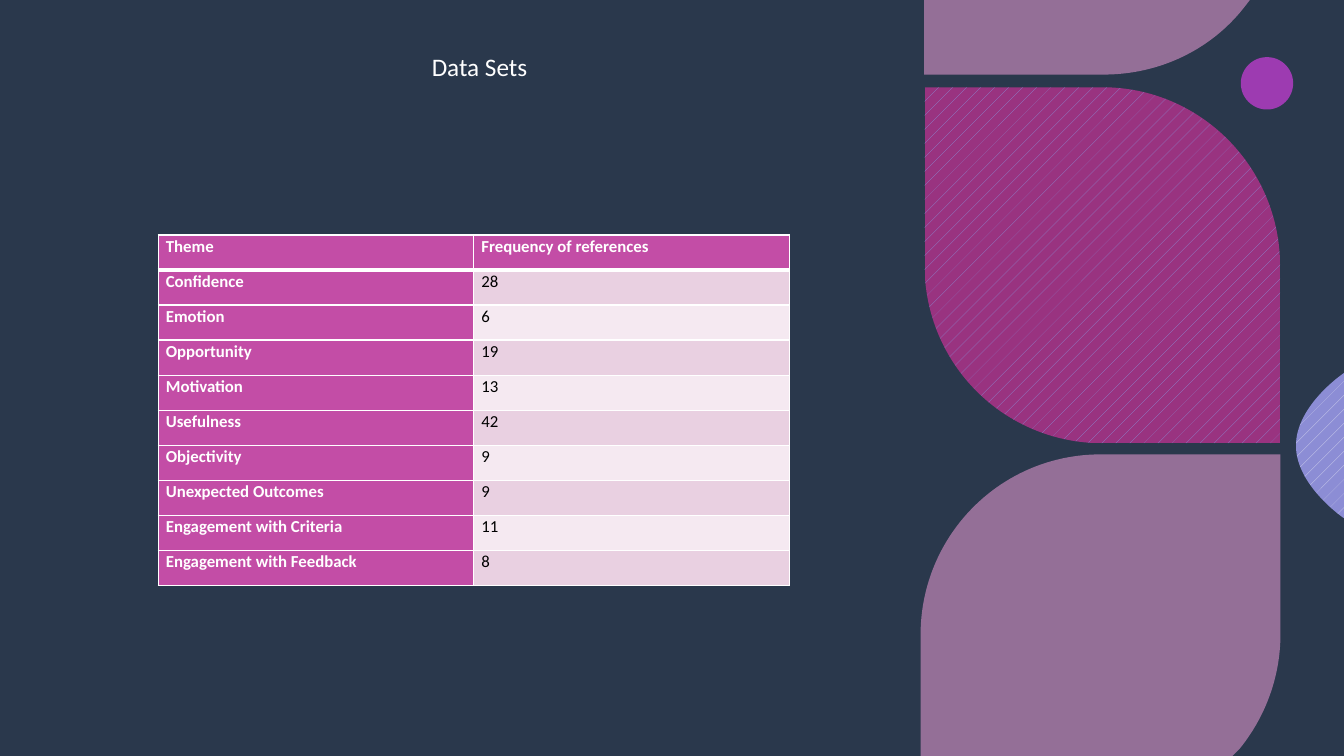
"""Build the Data Sets slide with its theme table and leaf shapes."""
import pptx
import pptx.dml.color
import pptx.enum.dml
import pptx.enum.shapes
import pptx.enum.text
import pptx.oxml
import pptx.oxml.ns
import pptx.util

Cm = pptx.util.Cm
Pt = pptx.util.Pt
RGB = pptx.dml.color.RGBColor
SHAPE = pptx.enum.shapes.MSO_SHAPE
qn = pptx.oxml.ns.qn
SPACE = pptx.oxml.ns.nsdecls("a")

NIGHT = RGB(0x1B, 0x24, 0x30)
SLATE = RGB(0x42, 0x58, 0x76)
VIOLET = RGB(0x9D, 0x3B, 0xB1)
ROSE = RGB(0xDB, 0x94, 0xCA)
LILAC = RGB(0x8C, 0x8D, 0xD5)
PALE = RGB(0xD9, 0xD9, 0xF1)
PLUM = RGB(0x99, 0x33, 0x80)
PINK = RGB(0xC3, 0x4D, 0xA6)
BANDS = (RGB(0xE9, 0xD0, 0xE1), RGB(0xF5, 0xE9, 0xF1))
WHITE = RGB(0xFF, 0xFF, 0xFF)
BLACK = RGB(0, 0, 0)
FONT = "Calibri"
WIDTH, HEIGHT = 33.87, 19.05

ROWS = [
    ("Theme", "Frequency of references"),
    ("Confidence", "28"),
    ("Emotion", "6"),
    ("Opportunity", "19"),
    ("Motivation", "13"),
    ("Usefulness", "42"),
    ("Objectivity", "9"),
    ("Unexpected Outcomes", "9"),
    ("Engagement with Criteria", "11"),
    ("Engagement with Feedback", "8"),
]


def paint(shape, color, alpha=100):
    """Give a shape a solid fill of the given opacity in percent."""
    shape.shadow.inherit = False
    shape.line.fill.background()
    shape.fill.solid()
    shape.fill.fore_color.rgb = color
    if alpha < 100:
        node = shape.element.spPr.find(qn("a:solidFill"))[0]
        node.append(pptx.oxml.parse_xml(f'<a:alpha {SPACE} val="{alpha * 1000}"/>'))


def hatch(shape, fore, back):
    """Give a shape a light pattern fill."""
    shape.shadow.inherit = False
    shape.line.fill.background()
    shape.fill.patterned()
    shape.fill.pattern = pptx.enum.dml.MSO_PATTERN.PERCENT_5
    shape.fill.fore_color.rgb = fore
    shape.fill.back_color.rgb = back


def add_form(slide, kind, left, top, width, height):
    """Add a preset shape measured in centimetres."""
    return slide.shapes.add_shape(kind, Cm(left), Cm(top), Cm(width), Cm(height))


def bend(lines):
    """Turn three line steps into one cubic curve."""
    curve = pptx.oxml.parse_xml(f"<a:cubicBezTo {SPACE}/>")
    lines[0].addprevious(curve)
    for line in lines:
        curve.append(line[0])
        line.getparent().remove(line)


def add_leaf(slide, start, *parts):
    """Add a closed outline of points (lines) and point triples (curves)."""
    steps = [part if len(part) == 3 else (part,) for part in parts]
    spots = [(Cm(x), Cm(y)) for step in steps for x, y in step]
    pen = slide.shapes.build_freeform(Cm(start[0]), Cm(start[1]))
    pen.add_line_segments(spots, close=True)
    shape = pen.convert_to_shape()
    lines = list(shape.element.iter(qn("a:lnTo")))
    for step in steps:
        if len(step) == 3:
            bend(lines[:3])
        lines = lines[len(step):]
    return shape


def add_decor(slide):
    """Draw the tinted backdrop and the leaves on the right."""
    paint(add_form(slide, SHAPE.RECTANGLE, 0, 0, WIDTH, HEIGHT), SLATE, 40)
    paint(add_form(slide, SHAPE.OVAL, 31.27, 1.44, 1.32, 1.32), VIOLET)
    upper = add_leaf(
        slide, (23.29, 0), (31.5, 0), (31.32, 0.23),
        ((30.51, 1.24), (29.24, 1.88), (27.81, 1.88)), (23.29, 1.88))
    lower = add_leaf(
        slide, (27.74, 11.45), (32.27, 11.45), (32.27, 15.98),
        ((32.27, 17.07), (31.88, 18.08), (31.24, 18.87)),
        (31.06, HEIGHT), (23.2, HEIGHT), (23.2, 16),
        ((23.2, 13.49), (25.22, 11.45), (27.74, 11.45)))
    for leaf in (upper, lower):
        paint(leaf, ROSE, 60)
    edge = add_leaf(
        slide, (WIDTH, 9.4), (WIDTH, 13.06),
        ((WIDTH, 13.06), (32.66, 12.24), (32.66, 11.23)),
        ((32.66, 10.21), (WIDTH, 9.4), (WIDTH, 9.4)))
    hatch(edge, PALE, LILAC)
    middle = add_leaf(
        slide, (32.26, 11.17), (27.79, 11.17),
        ((25.3, 11.17), (23.3, 9.17), (23.3, 6.68)),
        (23.3, 2.2), (27.79, 2.2),
        ((30.25, 2.2), (32.26, 4.22), (32.26, 6.7)))
    hatch(middle, LILAC, PLUM)


def add_run(para, text, size, color, bold=False):
    """Add one formatted run to a paragraph."""
    run = para.add_run()
    run.text = text
    run.font.name = FONT
    run.font.size = Pt(size)
    run.font.bold = bold
    run.font.color.rgb = color


def add_title(slide, text):
    """Place the title above the backdrop."""
    title = slide.shapes.title
    title.element.getparent().append(title.element)
    title.left, title.top = Cm(1.57), Cm(1.17)
    title.width, title.height = Cm(21.03), Cm(1.02)
    frame = title.text_frame
    frame.word_wrap = True
    frame.auto_size = pptx.enum.text.MSO_AUTO_SIZE.SHAPE_TO_FIT_TEXT
    frame.vertical_anchor = pptx.enum.text.MSO_ANCHOR.TOP
    para = frame.paragraphs[0]
    para.alignment = pptx.enum.text.PP_ALIGN.CENTER
    add_run(para, text, 18, WHITE)


def edge_cell(cell, top, bottom):
    """Draw white borders round a cell, widths in points."""
    props = cell._tc.get_or_add_tcPr()
    sides = (("L", 1), ("R", 1), ("T", top), ("B", bottom))
    for place, (side, width) in enumerate(sides):
        props.insert(place, pptx.oxml.parse_xml(
            f'<a:ln{side} {SPACE} w="{Pt(width)}">'
            f'<a:solidFill><a:srgbClr val="{WHITE}"/></a:solidFill></a:ln{side}>'))


def fill_cell(cell, text, row, col):
    """Write and style one table cell."""
    label = row == 0 or col == 0
    cell.margin_left = cell.margin_right = Cm(0.19)
    cell.margin_top = cell.margin_bottom = 0
    cell.fill.solid()
    cell.fill.fore_color.rgb = PINK if label else BANDS[(row - 1) % 2]
    edge_cell(cell, 3 if row == 1 else 1, 3 if row == 0 else 1)
    para = cell.text_frame.paragraphs[0]
    para.line_spacing = 1.07
    para.space_after = Pt(8)
    add_run(para, text, 12, WHITE if label else BLACK, label)


def add_grid(slide, rows):
    """Add the table of themes."""
    frame = slide.shapes.add_table(
        len(rows), 2, Cm(3.99), Cm(5.92), Cm(15.9), Cm(8.83))
    table = frame.table
    table.first_col = True
    for row, texts in enumerate(rows):
        for col, text in enumerate(texts):
            fill_cell(table.cell(row, col), text, row, col)


def main():
    """Build and save the slide."""
    deck = pptx.Presentation()
    deck.slide_width, deck.slide_height = Cm(WIDTH), Cm(HEIGHT)
    slide = deck.slides.add_slide(deck.slide_layouts[5])
    slide.background.fill.solid()
    slide.background.fill.fore_color.rgb = NIGHT
    add_decor(slide)
    add_title(slide, "Data Sets")
    add_grid(slide, ROWS)
    deck.save("out.pptx")


if __name__ == "__main__":
    main()
